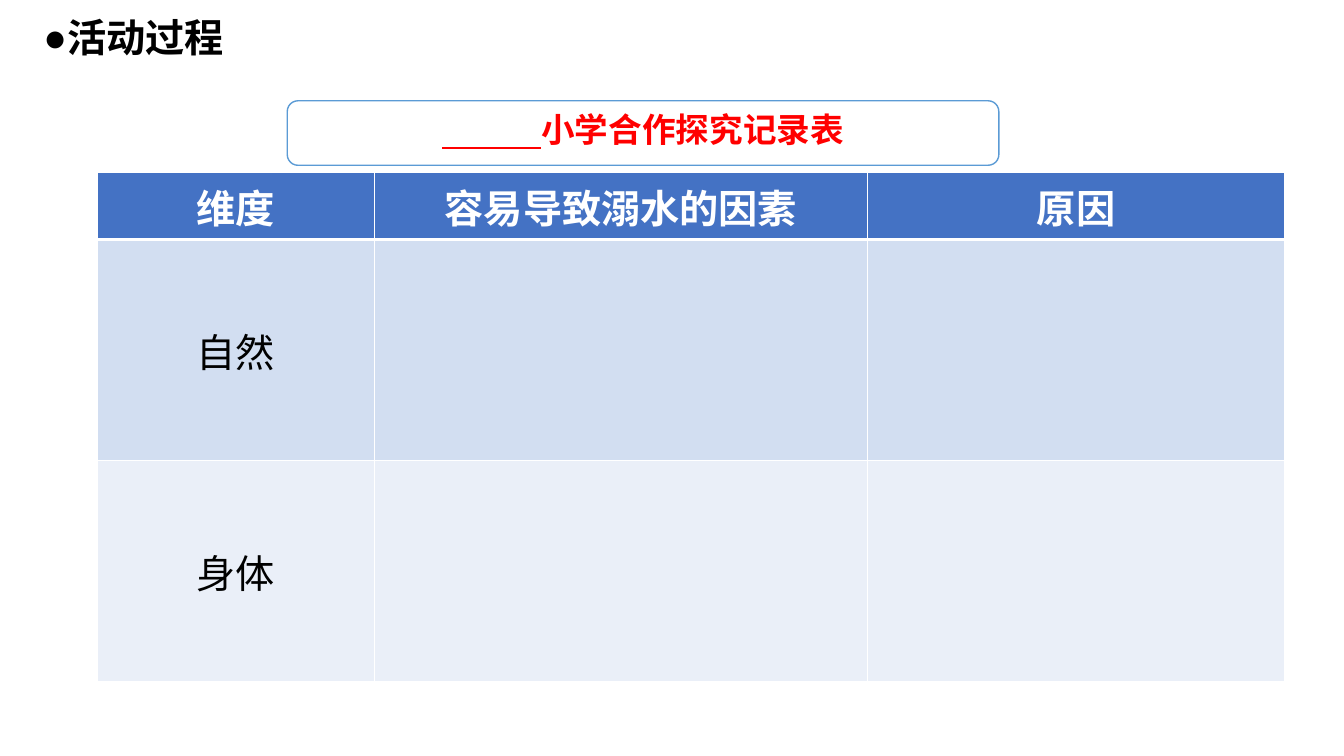
import dataclasses

import lxml.etree
import pptx
import pptx.dml.color
import pptx.enum.shapes
import pptx.enum.text
import pptx.oxml.ns
import pptx.util


@dataclasses.dataclass(frozen=True)
class Theme:
    black: str = "000000"
    white: str = "FFFFFF"
    red: str = "FF0000"
    outline: str = "5B9BD5"
    bands: tuple = ("4472C4", "D2DEF1", "EAEFF8")
    large: int = 28
    medium: int = 24
    latin: str = "Arial"
    chinese: str = "Noto Sans CJK SC"


theme = Theme()
Pt = pptx.util.Pt
rgb = pptx.dml.color.RGBColor.from_string
qn = pptx.oxml.ns.qn
CENTER = pptx.enum.text.PP_ALIGN.CENTER
MIDDLE = pptx.enum.text.MSO_ANCHOR.MIDDLE


def add_run(paragraph, text, size, color, bold, latin=theme.latin, underline=False):
    paragraph.alignment = CENTER
    run = paragraph.add_run()
    run.text = text
    run.font.size = Pt(size)
    run.font.bold = bold
    run.font.underline = underline
    run.font.color.rgb = rgb(color)
    run.font.name = latin
    properties = run.font._element if hasattr(run.font, "_element") else run._r.get_or_add_rPr()
    lxml.etree.SubElement(properties, qn("a:ea"), typeface=theme.chinese)


def add_border(cell, side, width):
    line = lxml.etree.SubElement(cell._tc.get_or_add_tcPr(), qn(f"a:ln{side}"), w=str(Pt(width)))
    fill = lxml.etree.SubElement(line, qn("a:solidFill"))
    lxml.etree.SubElement(fill, qn("a:srgbClr"), val=theme.white)


deck = pptx.Presentation()
deck.slide_width = Pt(960)
deck.slide_height = Pt(540)
slide = deck.slides.add_slide(deck.slide_layouts[5])

heading = slide.shapes.title
heading.left, heading.top, heading.width, heading.height = Pt(13.7), Pt(3.6), Pt(163.4), Pt(43.9)
heading.text_frame.auto_size = pptx.enum.text.MSO_AUTO_SIZE.NONE
heading.text_frame.vertical_anchor = pptx.enum.text.MSO_ANCHOR.BOTTOM
heading_line = heading.text_frame.paragraphs[0]
heading_properties = heading_line._p.get_or_add_pPr()
heading_properties.set("marL", "0")
heading_properties.set("indent", "0")
lxml.etree.SubElement(heading_properties, qn("a:buFont"), typeface=theme.latin)
lxml.etree.SubElement(heading_properties, qn("a:buChar"), char="●")
heading_line.line_spacing = 0.9
add_run(heading_line, "活动过程", theme.large, theme.black, True, theme.chinese)

rows = [
    ("维度", "容易导致溺水的因素", "原因"),
    ("自然", "", ""),
    ("身体", "", ""),
]
record = slide.shapes.add_table(3, 3, Pt(69.4), Pt(123.4), Pt(848.2), Pt(363)).table
for column, width in zip(record.columns, (198, 352.4, 297.8)):
    column.width = Pt(width)
for row, height in zip(record.rows, (47, 158, 158)):
    row.height = Pt(height)
for r, texts in enumerate(rows):
    is_header = r == 0
    for c, text in enumerate(texts):
        cell = record.cell(r, c)
        cell.vertical_anchor = MIDDLE
        for side in "LRTB":
            thick = (r, side) in ((0, "B"), (1, "T"))
            add_border(cell, side, 3 if thick else 1)
        cell.fill.solid()
        cell.fill.fore_color.rgb = rgb(theme.bands[r])
        if text:
            color = theme.white if is_header else theme.black
            add_run(cell.text_frame.paragraphs[0], text, theme.large, color, is_header)

caption = slide.shapes.add_shape(
    pptx.enum.shapes.MSO_SHAPE.ROUNDED_RECTANGLE, Pt(205.2), Pt(72), Pt(508.3), Pt(46.1)
)
caption.shadow.inherit = False
caption.fill.solid()
caption.fill.fore_color.rgb = rgb(theme.white)
caption.line.color.rgb = rgb(theme.outline)
caption.line.width = Pt(1)
caption.text_frame.word_wrap = True
caption.text_frame.vertical_anchor = MIDDLE
caption_line = caption.text_frame.paragraphs[0]
caption_line.line_spacing = 0.8
add_run(caption_line, "             ", theme.medium, theme.red, True, underline=True)
add_run(caption_line, "小学合作探究记录表", theme.medium, theme.red, True)

deck.save("out.pptx")
